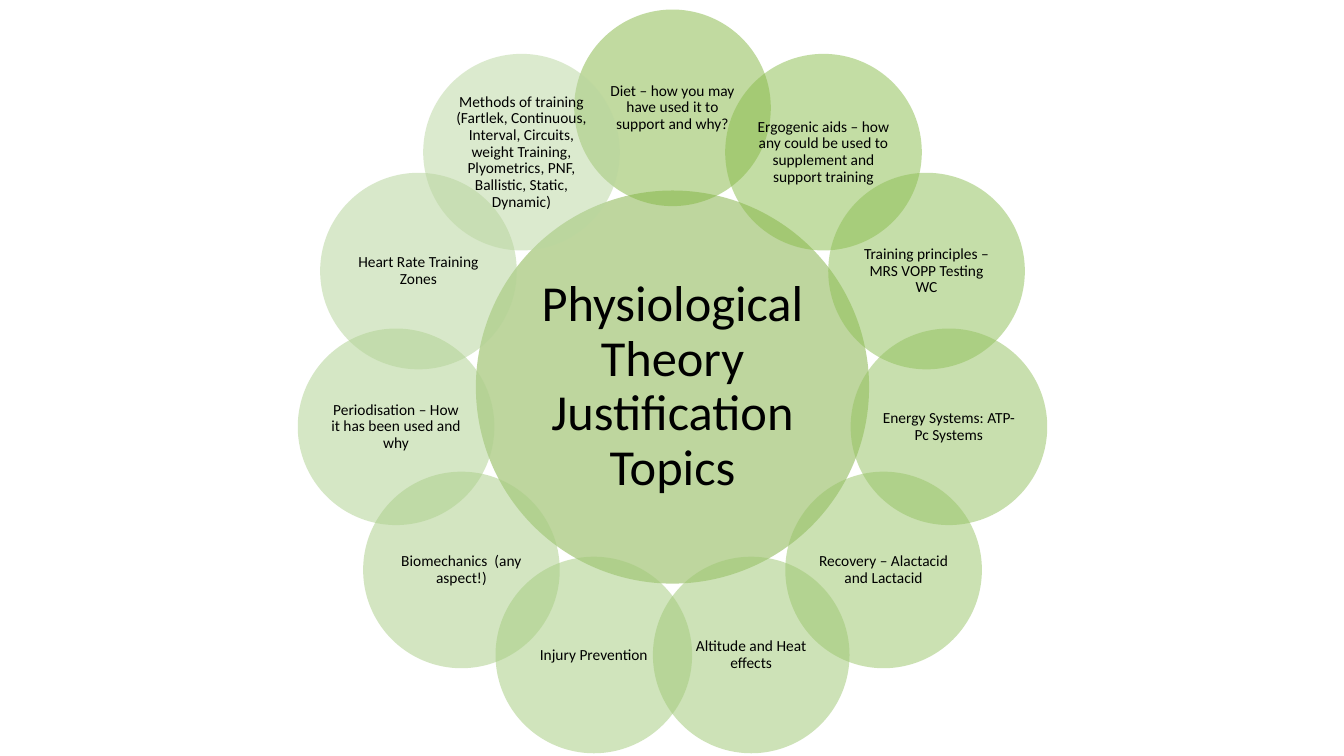
"""Build a slide with a hub theme surrounded by a ring of overlapping topic circles."""
import math

from lxml import etree
from pptx import Presentation
from pptx.dml.color import RGBColor
from pptx.enum.shapes import MSO_SHAPE
from pptx.enum.text import MSO_ANCHOR, MSO_AUTO_SIZE, PP_ALIGN
from pptx.oxml.ns import qn
from pptx.util import Inches, Pt

OVAL = MSO_SHAPE.OVAL
MIDDLE = MSO_ANCHOR.MIDDLE
CENTER = PP_ALIGN.CENTER
NO_AUTOFIT = MSO_AUTO_SIZE.NONE
TITLE_ONLY = 5

FONT = "Calibri"
CENTER_X, CENTER_Y = 6.67, 3.84
RING_RADIUS = 2.77
HUB_SIZE, TOPIC_SIZE, TITLE_SIZE = 3.9, 1.95, 2.76
OPACITY = 50

COLOURS = {
    "text": "000000",
    "hub": "7EAF3F",
    "diet": "84B743",
    "aids": "89BC4A",
    "principles": "8DBF54",
    "energy": "93C15E",
    "recovery": "98C467",
    "altitude": "9DC771",
    "injury": "A2CA7A",
    "biomechanics": "A8CD84",
    "periodisation": "ADD08D",
    "heart": "B3D396",
    "methods": "B9D69F",
}

THEME = "Physiological Theory Justification Topics"
TOPICS = {
    "diet": "Diet – how you may have used it to support and why?",
    "aids": "Ergogenic aids – how any could be used to supplement and support training",
    "principles": "Training principles – MRS VOPP Testing WC",
    "energy": "Energy Systems: ATP-Pc Systems",
    "recovery": "Recovery – Alactacid and Lactacid",
    "altitude": "Altitude and Heat effects",
    "injury": "Injury Prevention",
    "biomechanics": "Biomechanics  (any aspect!)",
    "periodisation": "Periodisation – How it has been used and why",
    "heart": "Heart Rate Training Zones",
    "methods": "Methods of training (Fartlek, Continuous, Interval, Circuits, "
               "weight Training, Plyometrics, PNF, Ballistic, Static, Dynamic)",
}


def box_around(x, y, size):
    """Return left, top, width and height of a square centred on a point."""
    return [Inches(value) for value in (x - size / 2, y - size / 2, size, size)]


def apply_format(target, values):
    """Set each attribute of the target from a dict of format values."""
    for attribute, value in values.items():
        setattr(target, attribute, value)


def write_text(shape, text, size, inset):
    """Write one centred paragraph into a shape."""
    frame = shape.text_frame
    frame.text = text
    margins = {f"margin_{side}": Inches(inset) for side in ("left", "top", "right", "bottom")}
    apply_format(frame, {"word_wrap": True, "auto_size": NO_AUTOFIT,
                         "vertical_anchor": MIDDLE, **margins})
    paragraph = frame.paragraphs[0]
    apply_format(paragraph, {"alignment": CENTER, "line_spacing": 0.9})
    font = paragraph.runs[0].font
    apply_format(font, {"name": FONT, "size": Pt(size)})
    font.color.rgb = RGBColor.from_string(COLOURS["text"])


def add_circle(slide, x, y, size, colour):
    """Add a translucent circle centred on a point."""
    circle = slide.shapes.add_shape(OVAL, *box_around(x, y, size))
    circle.shadow.inherit = False
    circle.line.fill.background()
    circle.fill.solid()
    circle.fill.fore_color.rgb = RGBColor.from_string(colour)
    rgb = circle.fill._xPr.find(qn("a:solidFill")).find(qn("a:srgbClr"))
    etree.SubElement(rgb, qn("a:alpha"), val=str(OPACITY * 1000))
    return circle


def add_hub(slide):
    """Add the central circle and lay the slide title over it."""
    add_circle(slide, CENTER_X, CENTER_Y, HUB_SIZE, COLOURS["hub"])
    title = slide.shapes.title
    sides = ("left", "top", "width", "height")
    apply_format(title, dict(zip(sides, box_around(CENTER_X, CENTER_Y, TITLE_SIZE))))
    write_text(title, THEME, 36, 0.05)
    slide.shapes._spTree.append(title._element)


def add_topics(slide):
    """Place the topic circles clockwise around the hub, starting at the top."""
    for index, (topic, text) in enumerate(TOPICS.items()):
        angle = math.tau * index / len(TOPICS)
        x = CENTER_X + RING_RADIUS * math.sin(angle)
        y = CENTER_Y - RING_RADIUS * math.cos(angle)
        circle = add_circle(slide, x, y, TOPIC_SIZE, COLOURS[topic])
        write_text(circle, text, 11, 0.02)


def main():
    """Create the slide and save the presentation."""
    presentation = Presentation()
    apply_format(presentation, {"slide_width": Inches(13.33), "slide_height": Inches(7.5)})
    slide = presentation.slides.add_slide(presentation.slide_layouts[TITLE_ONLY])
    add_hub(slide)
    add_topics(slide)
    presentation.save("out.pptx")


if __name__ == "__main__":
    main()
